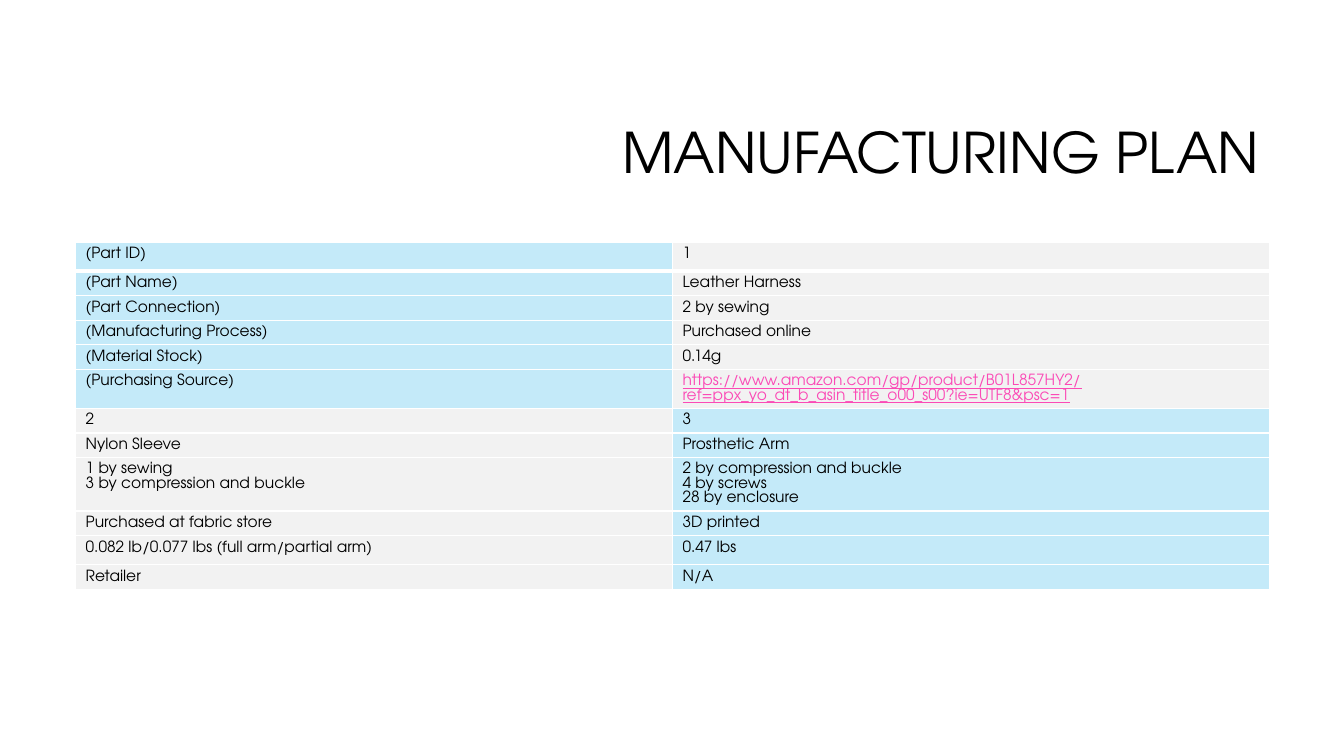
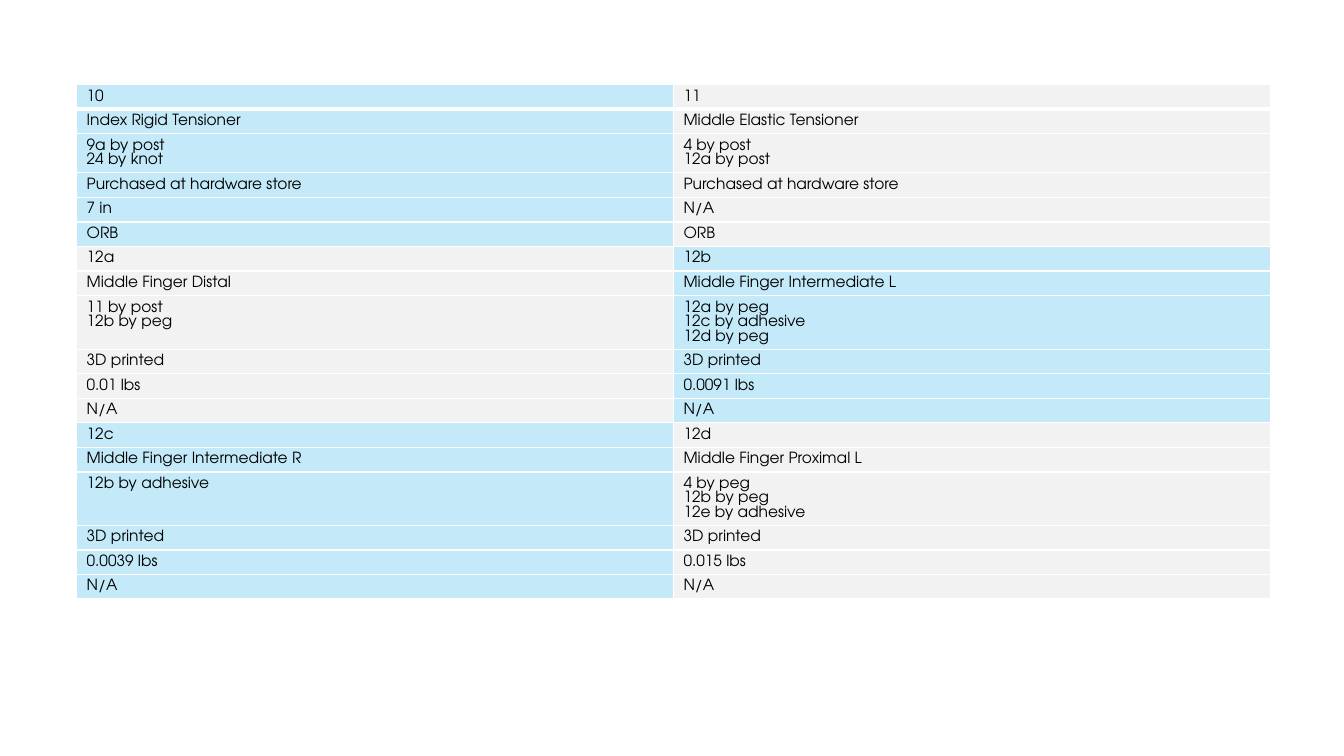
from dataclasses import dataclass
from itertools import chain

from lxml import etree
from pptx import Presentation
from pptx import util as u
from pptx.dml.color import RGBColor
from pptx.enum import text
from pptx.oxml import ns

PX = 9144  # 100 px to the inch


@dataclass(frozen=True)
class Theme:
    font: str = "TeX Gyre Adventor"
    ink: str = "000000"
    link: str = "FB4AB6"
    rule: str = "FFFFFF"
    fills: tuple = ("C4EAF9", "F2F2F2")
    title_size: int = 40
    cell_size: int = 11
    rule_width: int = 1
    header_rule_width: int = 3


THEME = Theme()
SLIDE_SIZE = (1333, 750)
TITLE_BOX = (317, 84, 942, 141)
COLUMN_WIDTH = 592
CELL_PADDING = 10
LINE_HEIGHT = 14

# Each part lists: ID, name, connections, process, stock, source.
FIRST_PARTS = [
    [
        ("(Part ID)", "(Part Name)", "(Part Connection)",
         "(Manufacturing Process)", "(Material Stock)", "(Purchasing Source)"),
        ("1", "Leather Harness", "2 by sewing", "Purchased online", "0.14g",
         "https://www.amazon.com/gp/product/B01L857HY2/"
         "ref=ppx_yo_dt_b_asin_title_o00_s00?ie=UTF8&psc=1"),
    ],
    [
        ("2", "Nylon Sleeve", "1 by sewing\n3 by compression and buckle",
         "Purchased at fabric store",
         "0.082 lb/0.077 lbs (full arm/partial arm)", "Retailer"),
        ("3", "Prosthetic Arm",
         "2 by compression and buckle\n4 by screws\n28 by enclosure",
         "3D printed", "0.47 lbs", "N/A"),
    ],
]
FINGER_PARTS = [
    [
        ("10", "Index Rigid Tensioner", "9a by post\n24 by knot",
         "Purchased at hardware store", "7 in", "ORB"),
        ("11", "Middle Elastic Tensioner", "4 by post\n12a by post",
         "Purchased at hardware store", "N/A", "ORB"),
    ],
    [
        ("12a", "Middle Finger Distal", "11 by post\n12b by peg",
         "3D printed", "0.01 lbs", "N/A"),
        ("12b", "Middle Finger Intermediate L",
         "12a by peg\n12c by adhesive\n12d by peg",
         "3D printed", "0.0091 lbs", "N/A"),
    ],
    [
        ("12c", "Middle Finger Intermediate R", "12b by adhesive",
         "3D printed", "0.0039 lbs", "N/A"),
        ("12d", "Middle Finger Proximal L",
         "4 by peg\n12b by peg\n12e by adhesive",
         "3D printed", "0.015 lbs", "N/A"),
    ],
]


def set_attributes(target, values):
    for name, value in values.items():
        setattr(target, name, value)


def format_text(frame, size, color=THEME.ink, underline=False):
    for paragraph in frame.paragraphs:
        for run in paragraph.runs:
            set_attributes(run.font, {"name": THEME.font, "size": u.Pt(size),
                                      "bold": False, "underline": underline})
            run.font.color.rgb = RGBColor.from_string(color)


def add_title(slide, wording):
    title = slide.shapes.title
    lengths = (px * PX for px in TITLE_BOX)
    set_attributes(title, dict(zip(("left", "top", "width", "height"), lengths)))
    frame = title.text_frame
    frame.text = wording
    set_attributes(frame, {"vertical_anchor": text.MSO_ANCHOR.MIDDLE,
                           "word_wrap": True})
    set_attributes(frame.paragraphs[0], {"alignment": text.PP_ALIGN.RIGHT,
                                         "line_spacing": 0.9})
    format_text(frame, THEME.title_size)


def add_borders(cell, top_width, bottom_width):
    properties = cell._tc.get_or_add_tcPr()
    widths = {"L": THEME.rule_width, "R": THEME.rule_width,
              "T": top_width, "B": bottom_width}
    for side, width in widths.items():
        line = etree.SubElement(properties, ns.qn(f"a:ln{side}"),
                                w=str(u.Pt(width)))
        fill = etree.SubElement(line, ns.qn("a:solidFill"))
        etree.SubElement(fill, ns.qn("a:srgbClr"), val=THEME.rule)


def fill_cell(cell, wording, fill, row):
    top, bottom = (THEME.header_rule_width if row == header_edge
                   else THEME.rule_width for header_edge in (1, 0))
    add_borders(cell, top, bottom)
    cell.fill.solid()
    cell.fill.fore_color.rgb = RGBColor.from_string(fill)
    cell.text_frame.text = wording
    is_link = wording.startswith("https:")
    format_text(cell.text_frame, THEME.cell_size,
                THEME.link if is_link else THEME.ink, is_link)


def add_parts_table(slide, left, top, part_pairs, tall_rows=()):
    """Stack pairs of parts, swapping the two fills from pair to pair."""
    rows = list(chain.from_iterable(zip(*pair) for pair in part_pairs))
    fields = len(part_pairs[0][0])
    heights = [
        29 if index in tall_rows
        else CELL_PADDING + LINE_HEIGHT * (1 + max(w.count("\n") for w in row))
        for index, row in enumerate(rows)
    ]
    table = slide.shapes.add_table(
        len(rows), 2, left * PX, top * PX,
        2 * COLUMN_WIDTH * PX, sum(heights) * PX).table
    set_attributes(table, {"first_row": False, "horz_banding": False})
    for index, row in enumerate(rows):
        table.rows[index].height = heights[index] * PX
        for column, wording in enumerate(row):
            fill = THEME.fills[(index // fields + column) % 2]
            fill_cell(table.cell(index, column), wording, fill, index)


def main():
    presentation = Presentation()
    width, height = SLIDE_SIZE
    set_attributes(presentation, {"slide_width": width * PX,
                                  "slide_height": height * PX})
    title_only, blank = presentation.slide_layouts[5], presentation.slide_layouts[6]

    slide = presentation.slides.add_slide(title_only)
    add_title(slide, "MANUFACTURING PLAN")
    add_parts_table(slide, 75, 240, FIRST_PARTS, tall_rows=(0, 10))

    slide = presentation.slides.add_slide(blank)
    add_parts_table(slide, 76, 84, FINGER_PARTS)

    presentation.save("out.pptx")


if __name__ == "__main__":
    main()
